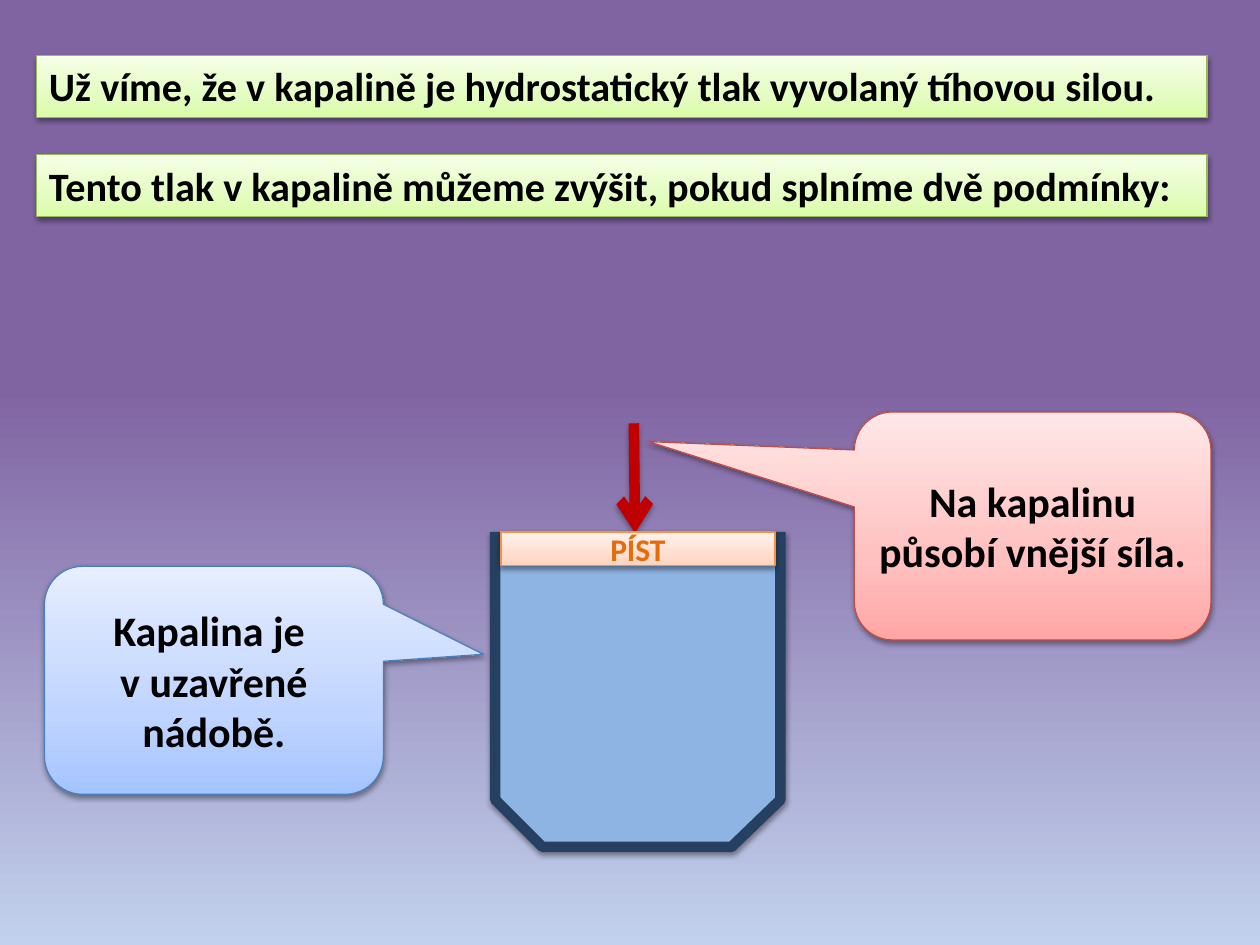
import pptx
import pptx.dml.color
import pptx.enum.shapes
import pptx.enum.text
import pptx.oxml.ns
import pptx.util
from lxml import etree

Pt = pptx.util.Pt
qn = pptx.oxml.ns.qn
rgb = pptx.dml.color.RGBColor.from_string
SHAPE = pptx.enum.shapes.MSO_SHAPE
ALIGN = pptx.enum.text.PP_ALIGN
ANCHOR = pptx.enum.text.MSO_ANCHOR


def set_gradient(fill, owner, stops, angle):
    """Fill with (percent, colour) stops; angle runs counter-clockwise."""
    fill.gradient()
    fill.gradient_angle = angle
    stop_list = owner.find(".//" + qn("a:gsLst"))
    for old_stop in list(stop_list):
        stop_list.remove(old_stop)
    for percent, colour in stops:
        stop = etree.SubElement(stop_list, qn("a:gs"), pos=str(percent * 1000))
        etree.SubElement(stop, qn("a:srgbClr"), val=colour)


def cast_shadow(part, opacity, distance):
    """Give a shape or connector a soft shadow straight below it."""
    properties = part._element.spPr
    for old_effects in properties.findall(qn("a:effectLst")):
        properties.remove(old_effects)
    effects = etree.SubElement(properties, qn("a:effectLst"))
    shadow = etree.SubElement(
        effects, qn("a:outerShdw"), blurRad=str(Pt(3.1)), dist=str(Pt(distance)),
        dir="5400000", rotWithShape="0")
    colour = etree.SubElement(shadow, qn("a:srgbClr"), val="000000")
    etree.SubElement(colour, qn("a:alpha"), val=str(opacity * 1000))


presentation = pptx.Presentation()
presentation.slide_width = Pt(720)
presentation.slide_height = Pt(540)
slide = presentation.slides.add_slide(presentation.slide_layouts[6])
set_gradient(slide.background.fill, slide._element,
             [(41, "8064A2"), (100, "C2D1ED")], 270)

# Vessel with liquid, open at the top
outline = slide.shapes.build_freeform(445.7, 303.8, scale=Pt(1))
outline.add_line_segments(
    [(446.5, 400), (445.7, 457.2), (418.3, 483.8), (309.6, 483.8),
     (283, 457.2), (283, 303.8)], close=False)
vessel = outline.convert_to_shape()
vessel.fill.solid()
vessel.fill.fore_color.rgb = rgb("8EB4E3")
vessel.line.color.rgb = rgb("254061")
vessel.line.width = Pt(6)
cast_shadow(vessel, 38, 1.6)

# Force pushing on the piston
force = slide.shapes.add_connector(
    pptx.enum.shapes.MSO_CONNECTOR.STRAIGHT, Pt(362.2), Pt(241.9), Pt(362.9), Pt(304.6))
force.line.color.rgb = rgb("C00000")
force.line.width = Pt(6)
etree.SubElement(force._element.spPr.find(qn("a:ln")), qn("a:tailEnd"), type="arrow")
cast_shadow(force, 35, 1.8)

green = ("DAFDA7", "E4FCC2", "F5FFE7")
orange = ("FFD2BD", "FFDED0", "FFF2ED")
blue = ("A4C4FF", "BFD4FF", "E6EEFF")
red = ("FFA6A5", "FFC0BF", "FFE7E7")
statement = (SHAPE.RECTANGLE, [], ALIGN.LEFT, ANCHOR.TOP)
piston = (SHAPE.RECTANGLE, [], ALIGN.CENTER, ANCHOR.MIDDLE)
vessel_note = (SHAPE.ROUNDED_RECTANGULAR_CALLOUT, [0.795, -0.114, 0.167],
               ALIGN.CENTER, ANCHOR.MIDDLE)
force_note = (SHAPE.ROUNDED_RECTANGULAR_CALLOUT, [-1.078, -0.37, 0.167],
              ALIGN.CENTER, ANCHOR.MIDDLE)

# Form, box, gradient, line colour, text, text size, text colour
labels = [
    (statement, (20.9, 31.7, 668.9, 35.3), green, "98B955",
     "Už víme, že v kapalině je hydrostatický tlak vyvolaný tíhovou silou.", 23, "000000"),
    (statement, (20.9, 88.4, 668.9, 35.3), green, "98B955",
     "Tento tlak v kapalině můžeme zvýšit, pokud splníme dvě podmínky:", 23, "000000"),
    (piston, (286.2, 304, 156.6, 19.4), orange, "F69240", "PÍST", 18, "E46C0A"),
    (vessel_note, (25.4, 323.6, 193.7, 130.3), blue, "4B7EBC",
     "Kapalina je \vv uzavřené nádobě.", 24, "000000"),
    (force_note, (488.2, 235.4, 203.8, 130.3), red, "BF4C48",
     "Na kapalinu působí vnější síla.", 24, "000000"),
]
for form, box, shades, edge, text, size, text_colour in labels:
    kind, adjustments, alignment, anchor = form
    label = slide.shapes.add_shape(kind, *[Pt(length) for length in box])
    for index, adjustment in enumerate(adjustments):
        label.adjustments[index] = adjustment
    set_gradient(label.fill, label._element, zip((0, 35, 100), shades), 90)
    label.line.color.rgb = rgb(edge)
    label.line.width = Pt(0.75)
    cast_shadow(label, 38, 1.6)
    frame = label.text_frame
    frame.word_wrap = True
    frame.vertical_anchor = anchor
    frame.text = text
    paragraph = frame.paragraphs[0]
    paragraph.alignment = alignment
    paragraph.font.name = "Calibri"
    paragraph.font.size = Pt(size)
    paragraph.font.bold = True
    paragraph.font.color.rgb = rgb(text_colour)

presentation.save("out.pptx")
